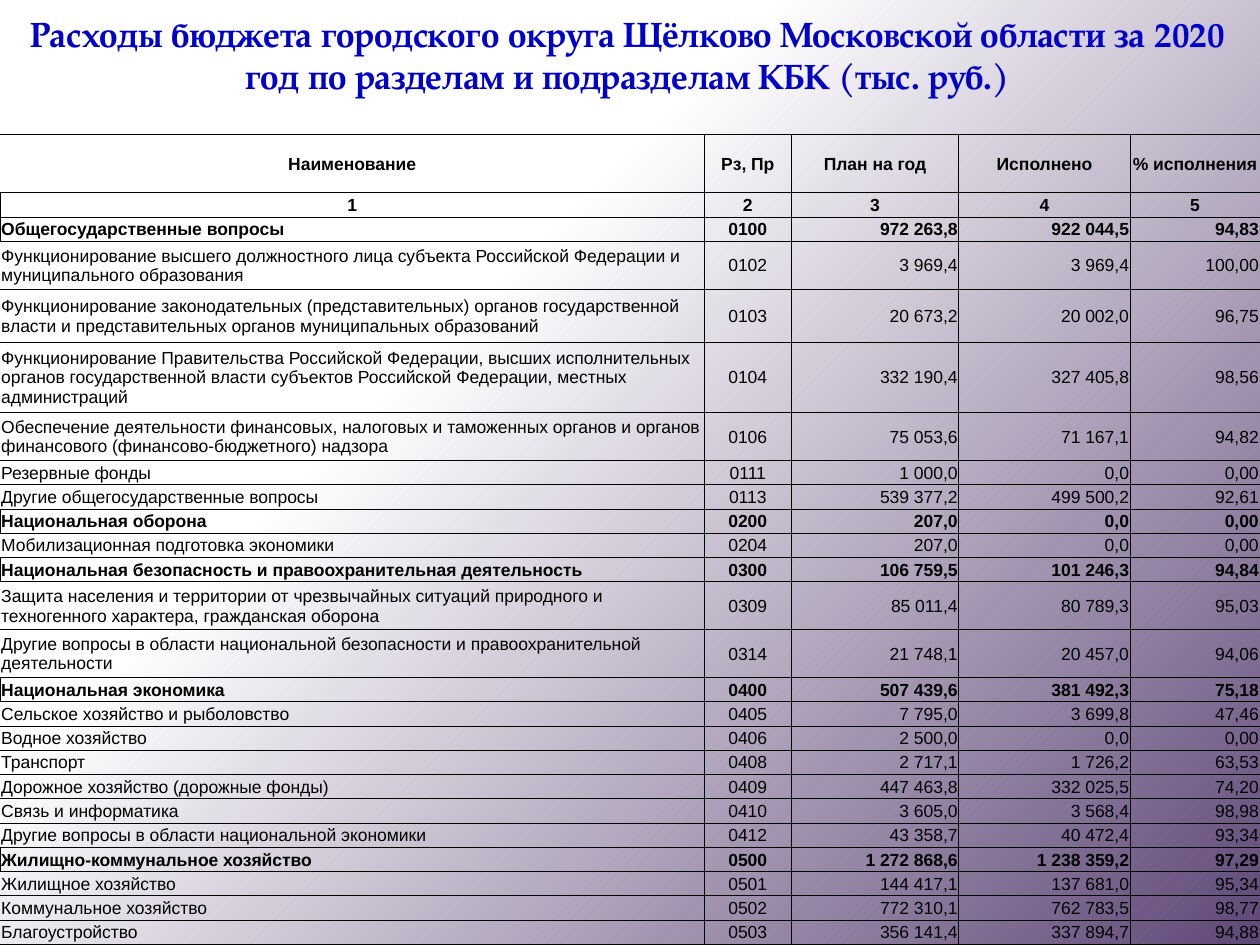
from copy import deepcopy

from lxml.etree import SubElement
from pptx import Presentation
from pptx.dml.color import RGBColor
from pptx.enum.text import MSO_ANCHOR as Anchor, MSO_AUTO_SIZE as AutoSize, PP_ALIGN as Align
from pptx.oxml.ns import qn
from pptx.util import Inches, Pt

TITLE = ("Расходы бюджета городского округа Щёлково Московской области за 2020 год "
         "по разделам и подразделам КБК (тыс. руб.)")
HEADERS = [
    ("Наименование", "Рз, Пр", "План на год", "Исполнено", "% исполнения"),
    ("1", "2", "3", "4", "5"),
]
EXPENSES = [
    ("Общегосударственные вопросы", "0100", "972 263,8", "922 044,5", "94,83"),
    ("Функционирование высшего должностного лица субъекта Российской Федерации "
     "и муниципального образования", "0102", "3 969,4", "3 969,4", "100,00"),
    ("Функционирование законодательных (представительных) органов государственной "
     "власти и представительных органов муниципальных образований",
     "0103", "20 673,2", "20 002,0", "96,75"),
    ("Функционирование Правительства Российской Федерации, высших исполнительных "
     "органов государственной власти субъектов Российской Федерации, местных "
     "администраций", "0104", "332 190,4", "327 405,8", "98,56"),
    ("Обеспечение деятельности финансовых, налоговых и таможенных органов и органов "
     "финансового (финансово-бюджетного) надзора",
     "0106", "75 053,6", "71 167,1", "94,82"),
    ("Резервные фонды", "0111", "1 000,0", "0,0", "0,00"),
    ("Другие общегосударственные вопросы", "0113", "539 377,2", "499 500,2", "92,61"),
    ("Национальная оборона", "0200", "207,0", "0,0", "0,00"),
    ("Мобилизационная подготовка экономики", "0204", "207,0", "0,0", "0,00"),
    ("Национальная безопасность и правоохранительная деятельность",
     "0300", "106 759,5", "101 246,3", "94,84"),
    ("Защита населения и территории от чрезвычайных ситуаций природного и "
     "техногенного характера, гражданская оборона",
     "0309", "85 011,4", "80 789,3", "95,03"),
    ("Другие вопросы в области национальной безопасности и правоохранительной "
     "деятельности", "0314", "21 748,1", "20 457,0", "94,06"),
    ("Национальная экономика", "0400", "507 439,6", "381 492,3", "75,18"),
    ("Сельское хозяйство и рыболовство", "0405", "7 795,0", "3 699,8", "47,46"),
    ("Водное хозяйство", "0406", "2 500,0", "0,0", "0,00"),
    ("Транспорт", "0408", "2 717,1", "1 726,2", "63,53"),
    ("Дорожное хозяйство (дорожные фонды)", "0409", "447 463,8", "332 025,5", "74,20"),
    ("Связь и информатика", "0410", "3 605,0", "3 568,4", "98,98"),
    ("Другие вопросы в области национальной экономики",
     "0412", "43 358,7", "40 472,4", "93,34"),
    ("Жилищно-коммунальное хозяйство", "0500", "1 272 868,6", "1 238 359,2", "97,29"),
    ("Жилищное хозяйство", "0501", "144 417,1", "137 681,0", "95,34"),
    ("Коммунальное хозяйство", "0502", "772 310,1", "762 783,5", "98,77"),
    ("Благоустройство", "0503", "356 141,4", "337 894,7", "94,88"),
]
COLUMN_WIDTHS = [5.59, 0.69, 1.33, 1.36, 1.03]
COLUMN_ALIGNS = [Align.LEFT, Align.CENTER, Align.RIGHT, Align.RIGHT, Align.RIGHT]
# Rows taller than one line of text, by row index
TALL_ROWS = {0: 0.46, 3: 0.38, 4: 0.42, 5: 0.56, 6: 0.38, 12: 0.38, 13: 0.38}
TABLE_HEIGHT = 6.43


def color(value):
    return RGBColor.from_string(value)


def add_run(para, text, font, size, fill, bold):
    span = para.add_run()
    span.text = text
    span.font.name = font
    span.font.size = Pt(size)
    span.font.bold = bold
    span.font.color.rgb = color(fill)


def paint_background(page):
    """Diagonal gradient that stays white for its first 35 percent."""
    fill = page.background.fill
    fill.gradient()
    fill.gradient_angle = 315
    start, end = fill.gradient_stops
    start.color.rgb, start.position = color("FFFFFF"), 0
    end.color.rgb, end.position = color("604878"), 1
    stops = next(page.element.iter(qn("a:gsLst")))
    middle = deepcopy(stops[0])
    middle.set("pos", "35000")
    stops.insert(1, middle)


def set_title(page):
    box = page.shapes.title
    box.left, box.top = Inches(-0.02), Inches(0.05)
    box.width, box.height = Inches(10), Inches(0.77)
    frame = box.text_frame
    frame.word_wrap = True
    frame.auto_size = AutoSize.SHAPE_TO_FIT_TEXT
    frame.vertical_anchor = Anchor.TOP
    para = frame.paragraphs[0]
    para.alignment = Align.CENTER
    add_run(para, TITLE, "TeX Gyre Pagella", 20, "0000CC", True)


def set_borders(cell, hidden):
    """Thin black lines on every side except the hidden ones."""
    properties = cell._tc.get_or_add_tcPr()
    for side in ("lnL", "lnR", "lnT", "lnB"):
        line = SubElement(properties, qn(f"a:{side}"), w=str(Pt(0.5)))
        if side in hidden:
            SubElement(line, qn("a:noFill"))
        else:
            solid = SubElement(line, qn("a:solidFill"))
            SubElement(solid, qn("a:srgbClr"), val="000000")


def fill_cell(cell, text, align, bold, hidden):
    set_borders(cell, hidden)
    cell.fill.background()
    cell.vertical_anchor = Anchor.MIDDLE
    cell.margin_left = cell.margin_right = cell.margin_top = Inches(0.01)
    cell.margin_bottom = 0
    para = cell.text_frame.paragraphs[0]
    para.alignment = align
    add_run(para, text, "Arial", 10, "000000", bold)


def add_budget_table(page):
    records = HEADERS + EXPENSES
    frame = page.shapes.add_table(len(records), len(COLUMN_WIDTHS), 0, Inches(1.07),
                                  Inches(10), Inches(TABLE_HEIGHT))
    table = frame.table
    table.first_row = table.horz_banding = False
    for column, width in zip(table.columns, COLUMN_WIDTHS):
        column.width = Inches(width)
    line_height = ((TABLE_HEIGHT - sum(TALL_ROWS.values()))
                   / (len(records) - len(TALL_ROWS)))
    for index, record in enumerate(records):
        table.rows[index].height = Inches(TALL_ROWS.get(index, line_height))
        is_header = index < len(HEADERS)
        is_section = record[1].endswith("00")
        open_left = index == 0 or not (is_header or is_section)
        for position, text in enumerate(record):
            align = Align.CENTER if is_header else COLUMN_ALIGNS[position]
            hidden = ("lnL",) if open_left and position == 0 else ()
            fill_cell(table.cell(index, position), text, align,
                      is_header or is_section, hidden)


def main():
    deck = Presentation()
    deck.slide_width, deck.slide_height = Inches(10), Inches(7.5)
    page = deck.slides.add_slide(deck.slide_layouts[5])
    paint_background(page)
    set_title(page)
    add_budget_table(page)
    deck.save("out.pptx")


if __name__ == "__main__":
    main()
